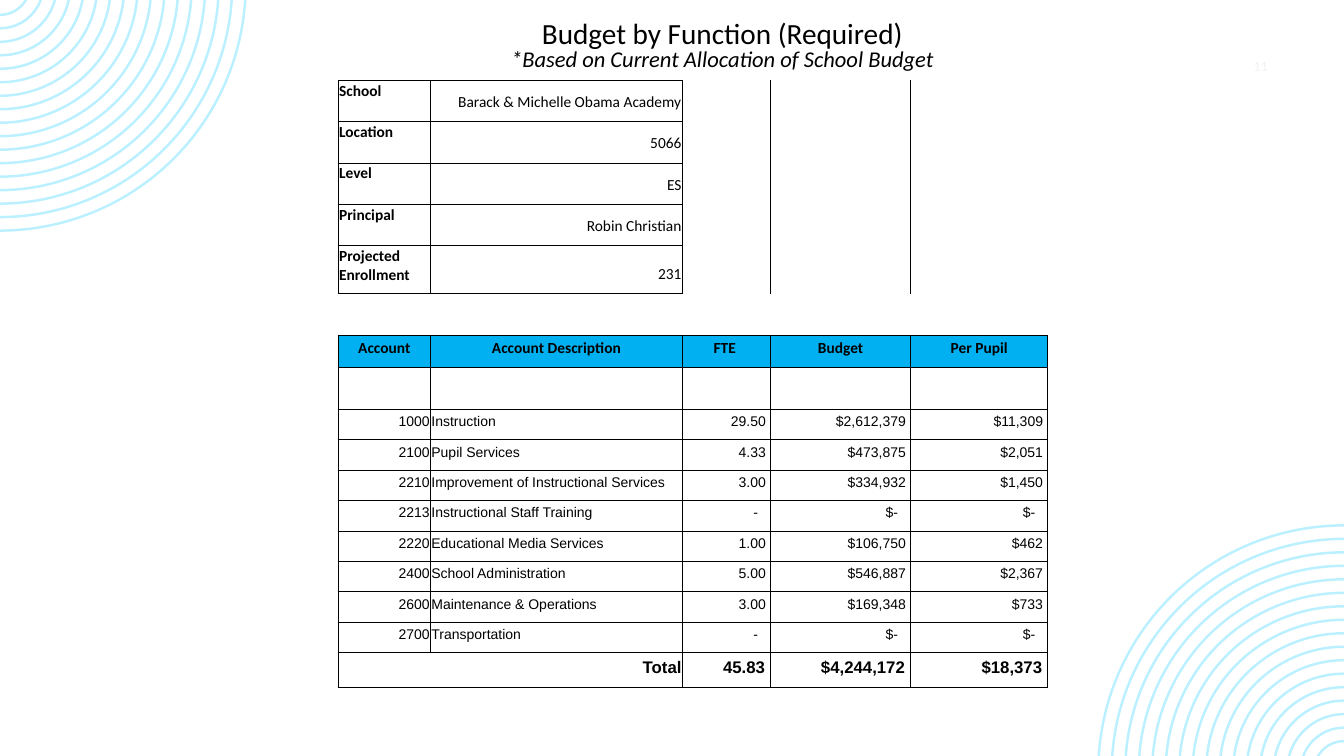
import math
from typing import NamedTuple

from lxml import etree
from pptx import Presentation
from pptx.dml.color import RGBColor
from pptx.enum.text import MSO_ANCHOR, PP_ALIGN
from pptx.oxml.ns import qn
from pptx.util import Pt

LEFT, MID, RIGHT = PP_ALIGN.LEFT, PP_ALIGN.CENTER, PP_ALIGN.RIGHT
TOP, CENTER, BASE = MSO_ANCHOR.TOP, MSO_ANCHOR.MIDDLE, MSO_ANCHOR.BOTTOM
WIDE, HIGH = 960, 540
BLACK, WHITE, AQUA, BLUE, PALE = "000000", "FFFFFF", "BAF0FF", "00B0F0", "F2F2F2"
NO_STYLE = "{2D5ABB26-0587-4C30-8999-92F81FD0307C}"


class Font(NamedTuple):
    name: str
    size: float
    bold: bool = False
    italic: bool = False
    color: str = BLACK


class Look(NamedTuple):
    font: Font
    align: PP_ALIGN
    anchor: MSO_ANCHOR = BASE
    space: float = 1.15
    right: float = 0.7


class Fact(NamedTuple):
    label: str
    value: str


class Item(NamedTuple):
    code: str
    name: str
    fte: str
    budget: str
    pupil: str


FACTS = [
    Fact("School", "Barack & Michelle Obama Academy"),
    Fact("Location", "5066"),
    Fact("Level", "ES"),
    Fact("Principal", "Robin Christian"),
    Fact("Projected Enrollment", "231"),
]
HEADS = Item("Account", "Account Description", "FTE", "Budget", "Per Pupil")
ITEMS = [
    Item("1000", "Instruction", "29.50", "$2,612,379", "$11,309"),
    Item("2100", "Pupil Services", "4.33", "$473,875", "$2,051"),
    Item("2210", "Improvement of Instructional Services", "3.00", "$334,932", "$1,450"),
    Item("2213", "Instructional Staff Training", "-", "$-", "$-"),
    Item("2220", "Educational Media Services", "1.00", "$106,750", "$462"),
    Item("2400", "School Administration", "5.00", "$546,887", "$2,367"),
    Item("2600", "Maintenance & Operations", "3.00", "$169,348", "$733"),
    Item("2700", "Transportation", "-", "$-", "$-"),
]
TOTAL = Item("Total", "", "45.83", "$4,244,172", "$18,373")

COLS = [66, 180, 63, 100, 98]
ROWS = [29.5] * 4 + [34.3, 29.3, 22.9, 30] + [21.7] * len(ITEMS) + [25]
GAP = len(FACTS)
HEAD = GAP + 1
FIRST = HEAD + 2
LAST = len(ROWS) - 1

LABEL = Look(Font("Calibri", 11, bold=True), LEFT, TOP, 1)
VALUE = Look(Font("Calibri", 11), RIGHT)
TITLE = Look(Font("Calibri", 11, bold=True), MID)
BODY = Font("Arial", 10)
CODE = Look(BODY, RIGHT)
NAME = Look(BODY, LEFT, space=1)
NUMBER = Look(BODY, RIGHT, right=3.5)
DASH = NUMBER._replace(right=9)
SUM = Look(Font("Arial", 12, bold=True), RIGHT)


def tint(code: str) -> RGBColor:
    return RGBColor.from_string(code)


def write(para, text: str, font: Font, align: PP_ALIGN, space: float = 1) -> None:
    para.alignment, para.line_spacing = align, space
    run = para.add_run()
    run.text = text
    run.font.name, run.font.size = font.name, Pt(font.size)
    run.font.bold, run.font.italic = font.bold, font.italic
    run.font.color.rgb = tint(font.color)


def point(track, tag: str, x: float, y: float) -> None:
    step = etree.SubElement(track, qn(f"a:{tag}"))
    etree.SubElement(step, qn("a:pt"), x=str(Pt(x)), y=str(Pt(y)))


def curve(track, radius: float, start: float, swing: float) -> None:
    size = str(Pt(radius))
    etree.SubElement(track, qn("a:arcTo"), wR=size, hR=size,
                     stAng=str(round(start * 60000)), swAng=str(round(swing * 60000)))


def rings(slide, left: float, top: float, turn: int) -> None:
    """Quarter rings, centred a little above the box and cut at its top edge."""
    drop, thick, wide, high = 10.8, 1.75, 176.1, 165.6
    pen = slide.shapes.build_freeform(0, 0)
    pen.add_line_segments([(Pt(wide), 0), (Pt(wide), Pt(high)), (0, Pt(high))])
    shape = pen.convert_to_shape()
    track = next(shape._element.iter(qn("a:path")))
    for step in list(track):
        track.remove(step)
    for i in range(17):
        outer = 176.4 - 9.63 * i
        inner = outer - thick
        begin, end = (math.degrees(math.asin(drop / r)) for r in (outer, inner))
        point(track, "moveTo", math.sqrt(outer ** 2 - drop ** 2), 0)
        curve(track, outer, begin, 90 - begin)
        point(track, "lnTo", 0, inner - drop)
        curve(track, inner, 90, end - 90)
        etree.SubElement(track, qn("a:close"))
    shape.left, shape.top, shape.rotation = Pt(left), Pt(top), turn
    shape.fill.solid()
    shape.fill.fore_color.rgb = tint(AQUA)
    shape.line.fill.background()
    shape.shadow.inherit = False


def box(slide, left: float, top: float, width: float, height: float,
        lines: list[tuple[str, Font]], space: float = 1) -> None:
    frame = slide.shapes.add_textbox(Pt(left), Pt(top), Pt(width), Pt(height)).text_frame
    frame.word_wrap, frame.vertical_anchor = True, CENTER
    for i, (text, font) in enumerate(lines):
        para = frame.add_paragraph() if i else frame.paragraphs[0]
        write(para, text, font, MID, space)


def sides(row: int, col: int) -> str:
    """Sides of a cell that carry a rule."""
    if row > GAP or (row < GAP and col < 2):
        return "LRTB"
    if row == GAP:
        return "TB" if col < 2 else "B"
    return {2: "LR", 3: "L"}.get(col, "")


def border(cell, drawn: str) -> None:
    props = cell._tc.get_or_add_tcPr()
    for side in drawn:
        line = etree.SubElement(props, qn(f"a:ln{side}"), w=str(Pt(0.75)))
        ink = etree.SubElement(line, qn("a:solidFill"))
        etree.SubElement(ink, qn("a:srgbClr"), val=BLACK)


def fill(cell, text: str, look: Look) -> None:
    cell.vertical_anchor, cell.margin_right = look.anchor, Pt(look.right)
    write(cell.text_frame.paragraphs[0], text, look.font, look.align, look.space)


def budget(slide) -> None:
    table = slide.shapes.add_table(len(ROWS), len(COLS), Pt(241.5), Pt(57.5),
                                   Pt(sum(COLS)), Pt(sum(ROWS))).table
    table.first_row = table.horz_banding = False
    table._tbl.tblPr.find(qn("a:tableStyleId")).text = NO_STYLE
    for col, width in enumerate(COLS):
        table.columns[col].width = Pt(width)
    # Frame and ground of every cell
    for row, height in enumerate(ROWS):
        table.rows[row].height = Pt(height)
        for col in range(len(COLS)):
            cell = table.cell(row, col)
            border(cell, sides(row, col))
            cell.margin_left = cell.margin_right = cell.margin_top = Pt(0.7)
            cell.margin_bottom = Pt(7.2)
            if row < HEAD:
                cell.fill.background()
            else:
                cell.fill.solid()
                cell.fill.fore_color.rgb = tint(BLUE if row == HEAD else WHITE)
    # School facts
    for row, fact in enumerate(FACTS):
        fill(table.cell(row, 0), fact.label, LABEL)
        fill(table.cell(row, 1), fact.value, VALUE)
    # Column heads, accounts and total
    for col, text in enumerate(HEADS):
        fill(table.cell(HEAD, col), text, TITLE._replace(right=3.2) if col == 2 else TITLE)
    for row, item in enumerate(ITEMS, FIRST):
        for col, text in enumerate(item):
            look = (CODE, NAME)[col] if col < 2 else DASH if text.endswith("-") else NUMBER
            fill(table.cell(row, col), text, look)
    table.cell(LAST, 0).merge(table.cell(LAST, 1))
    for col, text in enumerate(TOTAL):
        if text:
            fill(table.cell(LAST, col), text, SUM._replace(right=4) if col else SUM)


def main() -> None:
    deck = Presentation()
    deck.slide_width, deck.slide_height = Pt(WIDE), Pt(HIGH)
    slide = deck.slides.add_slide(deck.slide_layouts[6])
    # Corner rings
    rings(slide, 0, 0, 0)
    rings(slide, WIDE - 176.1, HIGH - 165.6, 180)
    # Title and page number
    box(slide, 192, 10, 648, 47.5, [
        ("Budget by Function (Required)", Font("Calibri", 20.9)),
        ("*Based on Current Allocation of School Budget", Font("Calibri", 16.1, italic=True)),
    ], 0.8)
    box(slide, 880, 37, 41, 20, [("11", Font("Calibri", 10, color=PALE))])
    budget(slide)
    deck.save("out.pptx")


if __name__ == "__main__":
    main()
